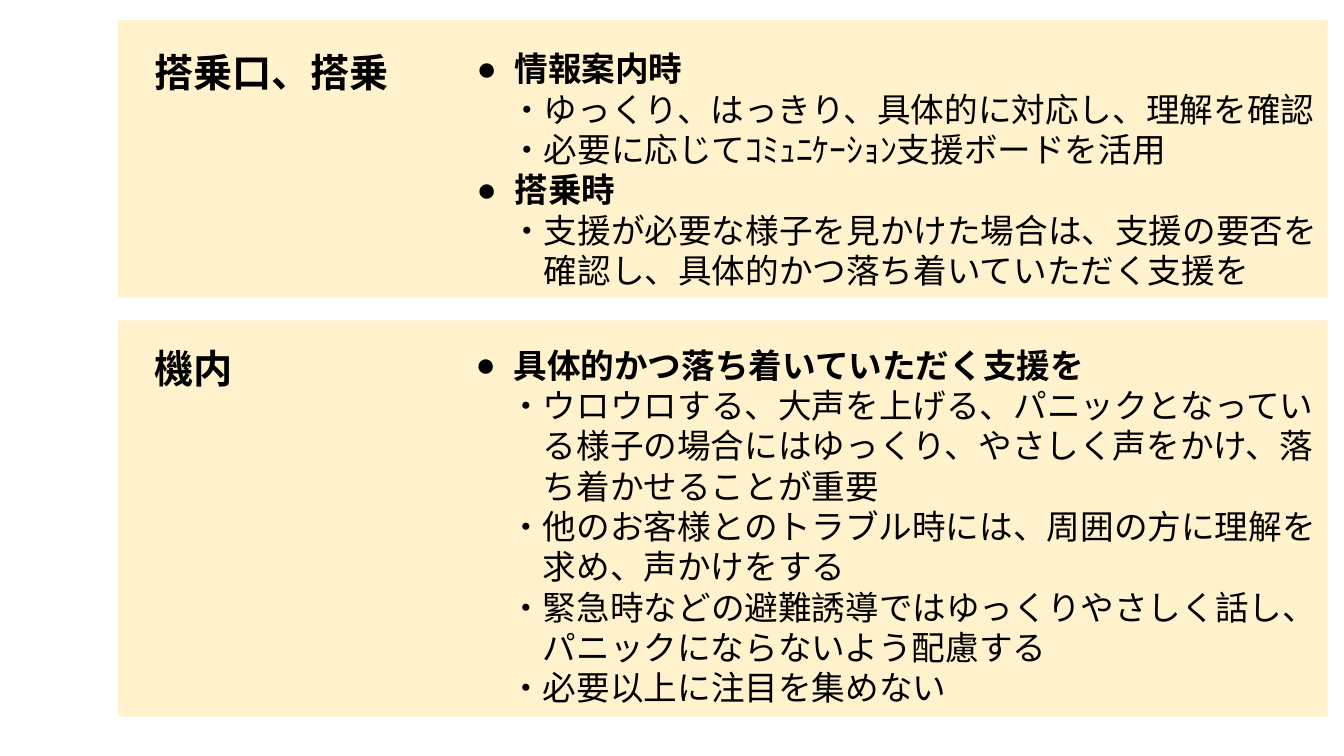
from dataclasses import dataclass
from enum import Enum

from lxml.etree import SubElement
from pptx import Presentation
from pptx.dml.color import RGBColor
from pptx.enum.shapes import MSO_SHAPE
from pptx.enum.text import MSO_AUTO_SIZE
from pptx.oxml.ns import qn
from pptx.util import Inches, Pt


@dataclass(frozen=True)
class Theme:
    font: str = "Noto Sans CJK JP"
    bullet_font: str = "Arial"
    ink: RGBColor = RGBColor(0, 0, 0)
    panel: RGBColor = RGBColor(0xFF, 0xF2, 0xCC)
    title_size: int = 28
    body_size: int = 24
    line_factor: float = 1.2


class Level(Enum):
    HEAD = "head"
    ITEM = "item"
    MORE = "more"  # continues the item above


@dataclass(frozen=True)
class Line:
    text: str
    level: Level = Level.ITEM


@dataclass(frozen=True)
class Box:
    """Left, top, width and height in percent of the slide."""
    x: float
    y: float
    w: float
    h: float


@dataclass(frozen=True)
class Section:
    title: str
    panel: Box
    title_box: Box
    body_box: Box
    lines: tuple[Line, ...]


THEME = Theme()
# Left margin and first-line indent in points; items step by one character
INDENTS = {
    Level.HEAD: (27, -27),
    Level.ITEM: (THEME.body_size, 0),
    Level.MORE: (2 * THEME.body_size, 0),
}

SECTIONS = (
    Section(
        "搭乗口、搭乗",
        Box(8.78, 2.67, 90, 36.67),
        Box(10.73, 5.73, 28.28, 7.6),
        Box(34.73, 5.73, 64.29, 33.6),
        (
            Line("情報案内時", Level.HEAD),
            Line("・ゆっくり、はっきり、具体的に対応し、理解を確認"),
            Line("・必要に応じてｺﾐｭﾆｹｰｼｮﾝ支援ボードを活用"),
            Line("搭乗時", Level.HEAD),
            Line("・支援が必要な様子を見かけた場合は、支援の要否を"),
            Line("確認し、具体的かつ落ち着いていただく支援を", Level.MORE),
        ),
    ),
    Section(
        "機内",
        Box(8.78, 42.4, 90, 52.4),
        Box(10.73, 44.93, 28.28, 7.6),
        Box(34.66, 44.93, 65.4, 49.87),
        (
            Line("具体的かつ落ち着いていただく支援を", Level.HEAD),
            Line("・ウロウロする、大声を上げる、パニックとなってい"),
            Line("る様子の場合にはゆっくり、やさしく声をかけ、落", Level.MORE),
            Line("ち着かせることが重要", Level.MORE),
            Line("・他のお客様とのトラブル時には、周囲の方に理解を"),
            Line("求め、声かけをする", Level.MORE),
            Line("・緊急時などの避難誘導ではゆっくりやさしく話し、"),
            Line("パニックにならないよう配慮する", Level.MORE),
            Line("・必要以上に注目を集めない"),
        ),
    ),
)

prs = Presentation()
prs.slide_width, prs.slide_height = Inches(13.33), Inches(7.5)
s = prs.slides.add_slide(prs.slide_layouts[6])


def place(box: Box) -> tuple[int, int, int, int]:
    across, down = prs.slide_width / 100, prs.slide_height / 100
    return (round(box.x * across), round(box.y * down),
            round(box.w * across), round(box.h * down))


def add_panel(box: Box) -> None:
    sp = s.shapes.add_shape(MSO_SHAPE.RECTANGLE, *place(box))
    sp.shadow.inherit = False
    sp.fill.solid()
    sp.fill.fore_color.rgb = THEME.panel
    sp.line.fill.background()


def add_frame(box: Box):
    tf = s.shapes.add_textbox(*place(box)).text_frame
    tf.word_wrap = True
    tf.auto_size = MSO_AUTO_SIZE.SHAPE_TO_FIT_TEXT
    return tf


def add_run(p, text: str, size: int, bold: bool) -> None:
    p.line_spacing = Pt(size * THEME.line_factor)
    r = p.add_run()
    r.text = text
    r.font.size, r.font.bold = Pt(size), bold
    r.font.color.rgb = THEME.ink
    r.font.name = THEME.font
    # East Asian glyphs take their own typeface entry
    SubElement(r._r.get_or_add_rPr(), qn("a:ea")).set("typeface", THEME.font)


def add_line(p, line: Line) -> None:
    is_head = line.level is Level.HEAD
    add_run(p, line.text, THEME.body_size, is_head)
    margin, indent = INDENTS[line.level]
    pPr = p._p.get_or_add_pPr()
    pPr.set("marL", str(Pt(margin)))
    pPr.set("indent", str(Pt(indent)))
    if is_head:
        SubElement(pPr, qn("a:buFont")).set("typeface", THEME.bullet_font)
        SubElement(pPr, qn("a:buChar")).set("char", "●")


def add_section(section: Section) -> None:
    add_panel(section.panel)
    title = add_frame(section.title_box)
    add_run(title.paragraphs[0], section.title, THEME.title_size, True)
    body = add_frame(section.body_box)
    for i, line in enumerate(section.lines):
        add_line(body.add_paragraph() if i else body.paragraphs[0], line)


# Both panels with their titles and guidance
for section in SECTIONS:
    add_section(section)

prs.save("out.pptx")
